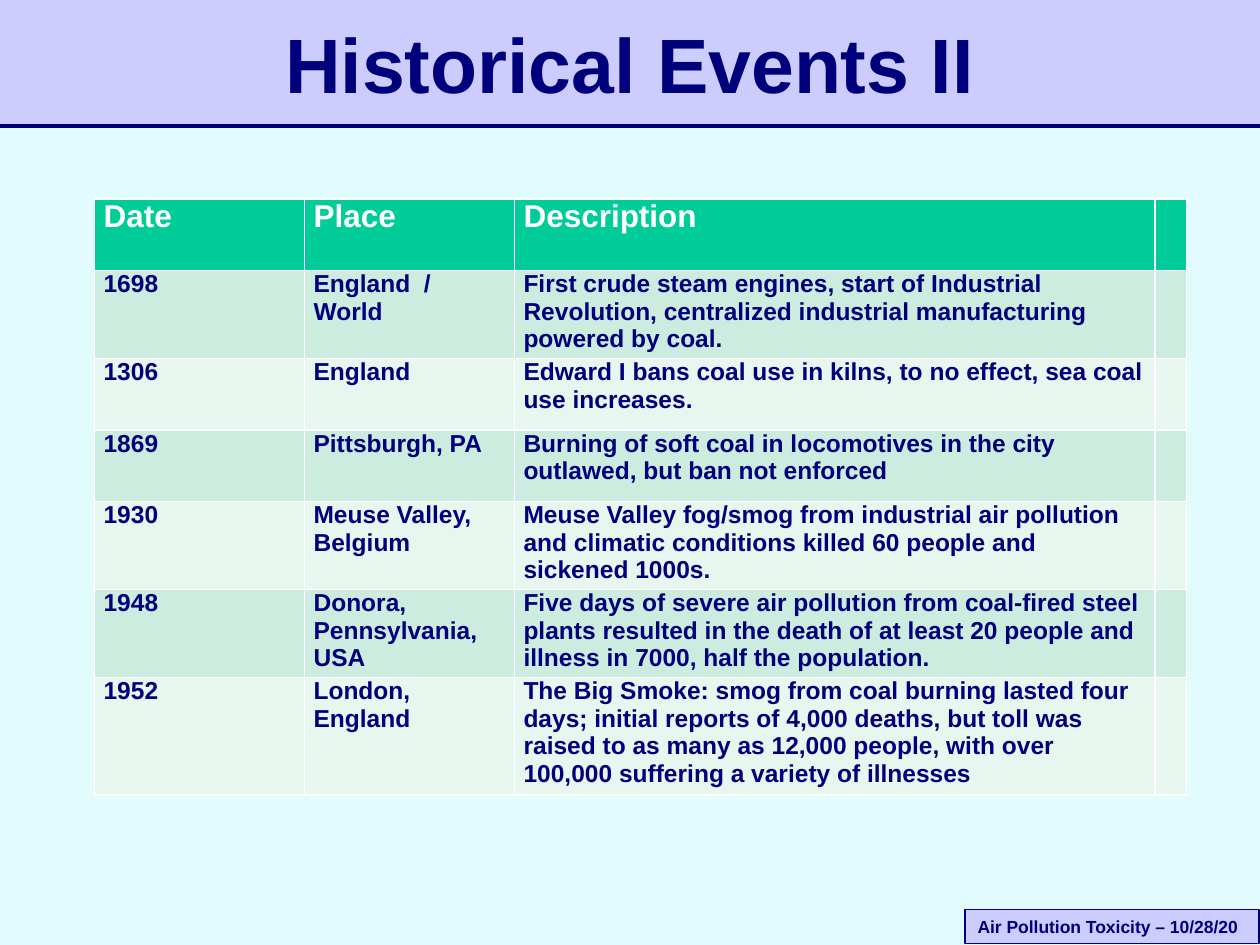
from pptx import Presentation
from pptx.dml.color import RGBColor
from pptx.enum.shapes import MSO_CONNECTOR, MSO_SHAPE
from pptx.enum.text import MSO_ANCHOR, PP_ALIGN
from pptx.oxml.ns import qn
from pptx.util import Pt
from lxml import etree

NAVY, LAVENDER, WHITE = "00007D", "CCCCFF", "FFFFFF"
HEADER_GREEN, BAND_GREENS = "00CC99", ("CBECDE", "E7F6EF")


def color(hex_code):
    return RGBColor.from_string(hex_code)


def add_text(frame, text, size, hex_code, align=PP_ALIGN.LEFT):
    """Put one bold Arial run into the first paragraph of a text frame."""
    para = frame.paragraphs[0]
    para.alignment = align
    span = para.add_run()
    span.text = text
    span.font.name = "Arial"
    span.font.size = Pt(size)
    span.font.bold = True
    span.font.color.rgb = color(hex_code)


deck = Presentation()
deck.slide_width, deck.slide_height = Pt(720), Pt(540)
page = deck.slides.add_slide(deck.slide_layouts[5])
page.background.fill.solid()
page.background.fill.fore_color.rgb = color("E2FCFE")

# Title band, its rule and the footer box
band = page.shapes.add_shape(MSO_SHAPE.RECTANGLE, Pt(0), Pt(0), Pt(720), Pt(72))
band.line.fill.background()

rule = page.shapes.add_connector(MSO_CONNECTOR.STRAIGHT, Pt(0), Pt(72), Pt(720), Pt(72))
rule.line.color.rgb = color(NAVY)
rule.line.width = Pt(2)
etree.SubElement(rule.element.spPr, qn("a:effectLst"))

footer = page.shapes.add_shape(MSO_SHAPE.RECTANGLE, Pt(551.5), Pt(519.8), Pt(168), Pt(19.4))
footer.line.color.rgb = color(NAVY)
footer.line.width = Pt(0.75)
footer.text_frame.word_wrap = False
footer.text_frame.vertical_anchor = MSO_ANCHOR.MIDDLE
add_text(footer.text_frame, "Air Pollution Toxicity – 10/28/20", 10, NAVY)

for box in (band, footer):
    box.shadow.inherit = False
    box.fill.solid()
    box.fill.fore_color.rgb = color(LAVENDER)

# Title, brought in front of its band
title = page.shapes.title
title.left, title.top, title.width, title.height = Pt(54), Pt(6), Pt(612), Pt(60)
title.text_frame.vertical_anchor = MSO_ANCHOR.MIDDLE
add_text(title.text_frame, "Historical Events II", 44, NAVY, PP_ALIGN.CENTER)
title.element.getparent().append(title.element)

# Events table; the last column is an empty strip
events = [
    ("Date", "Place", "Description"),
    ("1698", "England  / World",
     "First crude steam engines, start of Industrial Revolution, "
     "centralized industrial manufacturing powered by coal."),
    ("1306", "England",
     "Edward I bans coal use in kilns, to no effect, sea coal use increases."),
    ("1869", "Pittsburgh, PA",
     "Burning of soft coal in locomotives in the city outlawed, but ban not enforced"),
    ("1930", "Meuse Valley, Belgium",
     "Meuse Valley fog/smog from industrial air pollution and climatic "
     "conditions killed 60 people and sickened 1000s."),
    ("1948", "Donora, Pennsylvania, USA",
     "Five days of severe air pollution from coal-fired steel plants resulted in "
     "the death of at least 20 people and illness in 7000, half the population."),
    ("1952", "London, England",
     "The Big Smoke: smog from coal burning lasted four days; initial reports of "
     "4,000 deaths, but toll was raised to as many as 12,000 people, with over "
     "100,000 suffering a variety of illnesses"),
]
column_widths = (120, 120, 366, 18)
row_heights = (40.8, 50.3, 40.8, 40.8, 50.3, 50.3, 67.2)

table = page.shapes.add_table(
    len(row_heights), len(column_widths), Pt(54), Pt(113.8),
    Pt(sum(column_widths)), Pt(sum(row_heights))).table
for column, width in zip(table.columns, column_widths):
    column.width = Pt(width)

for number, (row, height, texts) in enumerate(zip(table.rows, row_heights, events)):
    row.height = Pt(height)
    is_header = number == 0
    for cell in row.cells:
        cell.fill.solid()
        cell.fill.fore_color.rgb = color(HEADER_GREEN if is_header else BAND_GREENS[(number - 1) % 2])
        cell.margin_left = cell.margin_right = Pt(5.2)
        cell.margin_top = cell.margin_bottom = Pt(0)
    for cell, text in zip(row.cells, texts):
        add_text(cell.text_frame, text, 18 if is_header else 14, WHITE if is_header else NAVY)

deck.save("out.pptx")
